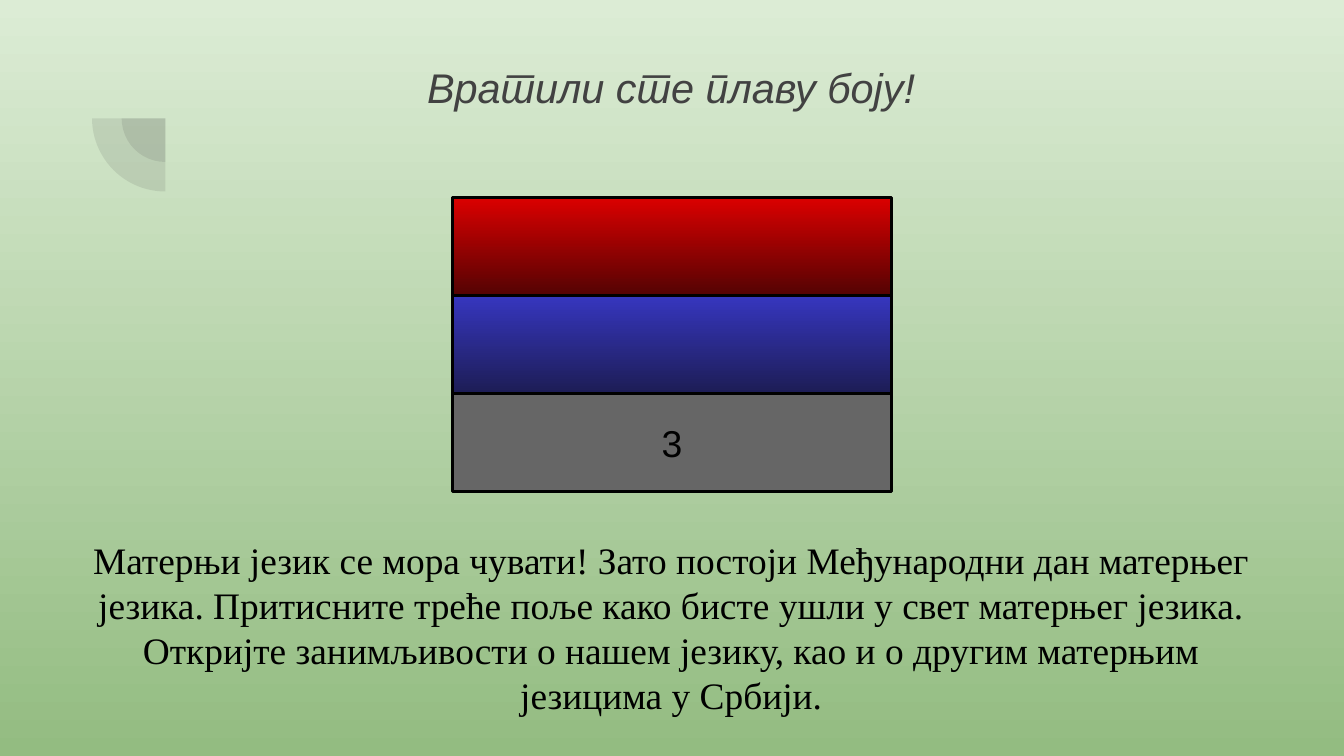
from pptx import Presentation
from pptx.dml.color import RGBColor
from pptx.enum.shapes import MSO_SHAPE as Shape
from pptx.enum.text import MSO_ANCHOR as Anchor, PP_ALIGN as Align
from pptx.oxml.ns import qn
from pptx.util import Inches, Pt
from lxml.etree import SubElement

# Content
LANGUAGE = "sr-RS"
TITLE = "Вратили сте плаву боју!"
BODY = ("Матерњи језик се мора чувати! Зато постоји Међународни дан матерњег "
        "језика. Притисните треће поље како бисте ушли у свет матерњег језика. "
        "Откријте занимљивости о нашем језику, као и о другим матерњим "
        "језицима у Србији.")
FIELDS = [("red", ""), ("blue", ""), ("grey", "3")]

THEME = {
    "background": ("DCECD5", "93BC81"),
    "red": ("DB0000", "540303"), "blue": ("3636BF", "1D1D55"), "grey": ("666666",),
    "dark": "424242", "black": "000000",
    "sans": "Arial", "serif": "Times New Roman",
    "title_size": 22.2, "text_size": 20, "outline": 1.5,
}

# Layout in inches, on a 16:9 slide
WIDTH = 10
HEIGHT = WIDTH * 9 / 16
FIELD_W, FIELD_H, FIELD_TOP = 3.27, 0.73, 1.47
PIE_CENTRE, PIE_SIZES = (1.23, 0.88), (0.65, 1.09)


def paint(fill, colours):
    """Fill with one colour, or shade two from top to bottom."""
    if len(colours) == 1:
        fill.solid()
        fill.fore_color.rgb = RGBColor.from_string(colours[0])
        return
    fill.gradient()
    fill.gradient_angle = 270
    for stop, colour in zip(fill.gradient_stops, colours):
        stop.color.rgb = RGBColor.from_string(colour)


def write(sp, text, *, font=THEME["sans"], size=THEME["text_size"],
          colour=THEME["black"], italic=False, anchor=Anchor.TOP, after=0):
    tf = sp.text_frame
    tf.word_wrap = True
    tf.vertical_anchor = anchor
    tf.margin_left = tf.margin_right = tf.margin_top = tf.margin_bottom = Inches(0.1)
    p = tf.paragraphs[0]
    p.alignment = Align.CENTER
    p.space_after = Pt(after)
    r = p.add_run()
    r.text = text
    r.font.name, r.font.size, r.font.italic = font, Pt(size), italic
    r.font.color.rgb = RGBColor.from_string(colour)
    # Serbian italics have their own letter forms
    r._r.get_or_add_rPr().set("lang", LANGUAGE)


def add_shape(kind, *box):
    sp = slide.shapes.add_shape(kind, *map(Inches, box))
    sp.shadow.inherit = False
    return sp


def add_text(box, text, **fmt):
    write(slide.shapes.add_textbox(*map(Inches, box)), text, **fmt)


prs = Presentation()
prs.slide_width, prs.slide_height = Inches(WIDTH), Inches(HEIGHT)
slide = prs.slides.add_slide(prs.slide_layouts[6])
paint(slide.background.fill, THEME["background"])

# Concentric translucent quarter circles
for size in PIE_SIZES:
    x, y = (c - size / 2 for c in PIE_CENTRE)
    sp = add_shape(Shape.PIE, x, y, size, size)
    sp.rotation = 270
    sp.adjustments[0], sp.adjustments[1] = 108, 162
    paint(sp.fill, (THEME["dark"],))
    sp.line.fill.background()
    colour = sp.fill._xPr.find(qn("a:solidFill"))[0]
    SubElement(colour, qn("a:alpha")).set("val", "12000")

# Title and body
add_text((0.42, 0.36, 9.15, 0.95), TITLE, size=THEME["title_size"],
         colour=THEME["dark"], italic=True)
add_text((0.56, 3.9, 8.87, 1.57), BODY, font=THEME["serif"], after=12)

# Flag of stacked fields
for row, (name, label) in enumerate(FIELDS):
    sp = add_shape(Shape.RECTANGLE, (WIDTH - FIELD_W) / 2,
                   FIELD_TOP + row * FIELD_H, FIELD_W, FIELD_H)
    paint(sp.fill, THEME[name])
    sp.line.color.rgb = RGBColor.from_string(THEME["black"])
    sp.line.width = Pt(THEME["outline"])
    if label:
        write(sp, label, anchor=Anchor.MIDDLE)

prs.save("out.pptx")
